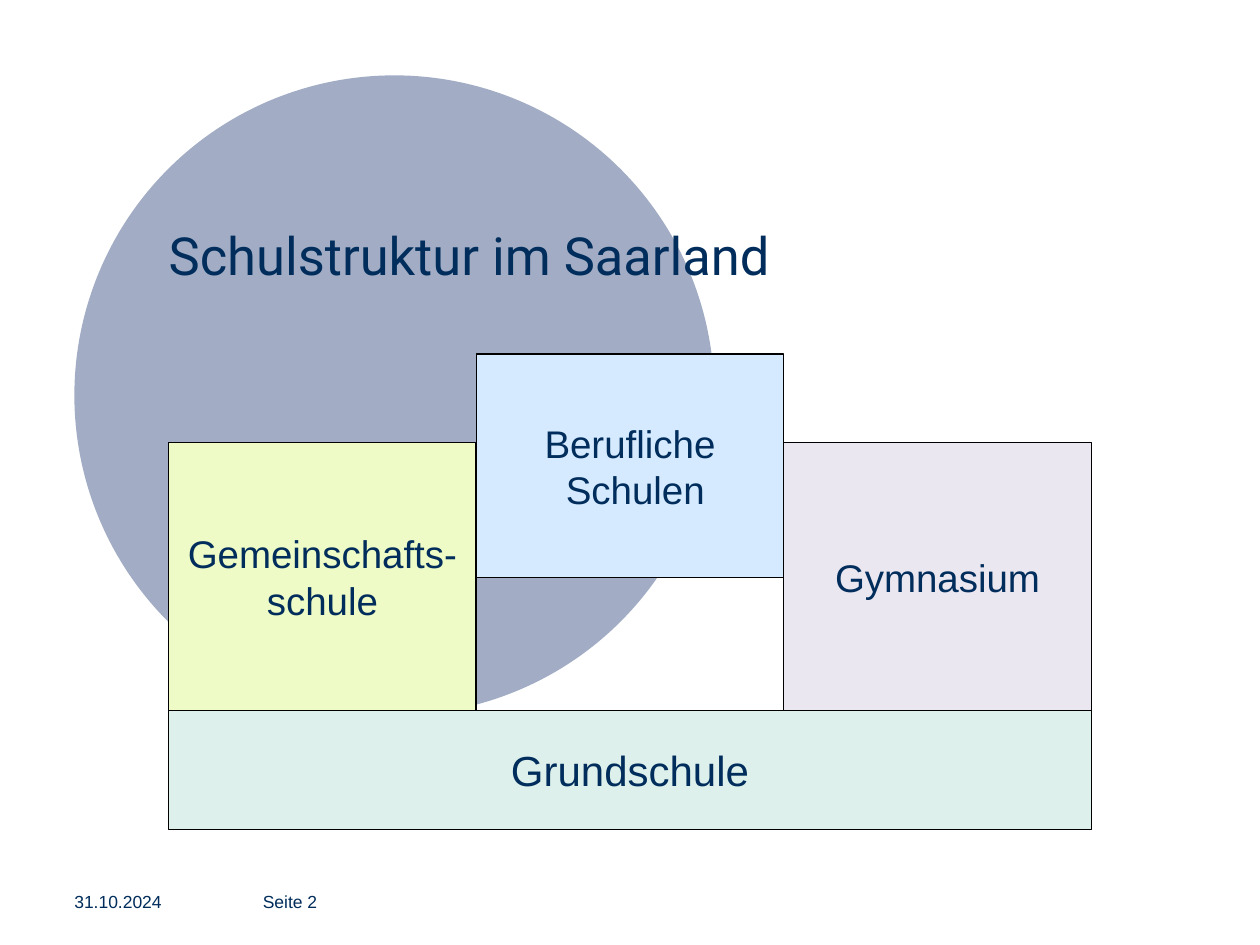
from typing import NamedTuple

from lxml.etree import SubElement
from pptx import Presentation
from pptx.dml.color import RGBColor
from pptx.enum.shapes import MSO_SHAPE
from pptx.enum.text import MSO_ANCHOR, PP_ALIGN
from pptx.oxml.ns import qn
from pptx.util import Cm, Pt

NAVY = "002D5B"
LEFT, WIDE = 3.4, 6.2  # left edge and width of the three columns
BASE = 14.33  # top of the ground floor


class Block(NamedTuple):
    text: str
    col: int
    span: int
    top: float
    high: float
    fill: str
    size: int = 22


BLOCKS = [
    Block("Grundschule", 0, 3, BASE, 2.39, "DDF0EC", 24),
    Block("Gymnasium", 2, 1, 8.92, BASE - 8.92, "EBE7F1"),
    Block("Gemeinschafts-\vschule", 0, 1, 8.92, BASE - 8.92, "EFFBC6"),
    Block("Berufliche\v Schulen", 1, 1, 7.14, 4.5, "D5EAFF"),
]


def paint(color, value: str) -> None:
    color.rgb = RGBColor.from_string(value)


def write(frame, text: str, size: int, face: str = "Arial", align=PP_ALIGN.LEFT) -> None:
    frame.text = text
    para = frame.paragraphs[0]
    para.alignment = align
    for run in para.runs:
        run.font.name = face
        run.font.size = Pt(size)
        paint(run.font.color, NAVY)


def strip(frame) -> None:
    """Remove the inner margins of a text frame."""
    frame.margin_left = frame.margin_right = 0
    frame.margin_top = frame.margin_bottom = 0


def add_disc(slide) -> None:
    disc = slide.shapes.add_shape(
        MSO_SHAPE.OVAL, Cm(1.5), Cm(1.52), Cm(12.9), Cm(12.9))
    disc.shadow.inherit = False
    disc.fill.solid()
    paint(disc.fill.fore_color, "8392B2")
    tint = disc.element.spPr.find(qn("a:solidFill"))[0]
    SubElement(tint, qn("a:alpha"), val="75000")
    disc.line.fill.background()


def set_title(slide) -> None:
    title = slide.shapes.title
    title.left, title.top = Cm(LEFT), Cm(3.12)
    title.width, title.height = Cm(20.5), Cm(2.65)
    frame = title.text_frame
    strip(frame)
    frame.word_wrap = True
    frame.vertical_anchor = MSO_ANCHOR.BOTTOM
    write(frame, "Schulstruktur im Saarland", 30, "Roboto")
    frame.paragraphs[0].line_spacing = 0.85
    # Bring the title in front of the disc
    slide.shapes.element.append(title.element)


def add_foot(slide, left: float, text: str) -> None:
    box = slide.shapes.add_textbox(Cm(left), Cm(17.88), Cm(3.2), Cm(0.6))
    frame = box.text_frame
    strip(frame)
    frame.word_wrap = False
    frame.vertical_anchor = MSO_ANCHOR.MIDDLE
    write(frame, text, 10)


def add_block(group, block: Block) -> None:
    box = group.shapes.add_shape(
        MSO_SHAPE.RECTANGLE, Cm(LEFT + block.col * WIDE), Cm(block.top),
        Cm(block.span * WIDE), Cm(block.high))
    box.shadow.inherit = False
    box.fill.solid()
    paint(box.fill.fore_color, block.fill)
    paint(box.line.color, "000000")
    box.line.width = Pt(0.75)
    frame = box.text_frame
    frame.word_wrap = False
    frame.vertical_anchor = MSO_ANCHOR.MIDDLE
    write(frame, block.text, block.size, align=PP_ALIGN.CENTER)


def main() -> None:
    deck = Presentation()
    deck.slide_width, deck.slide_height = Cm(25.4), Cm(19.05)
    slide = deck.slides.add_slide(deck.slide_layouts[5])
    add_foot(slide, 5.3, "Seite 2")
    add_disc(slide)
    set_title(slide)
    add_foot(slide, 1.5, "31.10.2024")
    group = slide.shapes.add_group_shape()
    for block in BLOCKS:
        add_block(group, block)
    deck.save("out.pptx")


if __name__ == "__main__":
    main()
